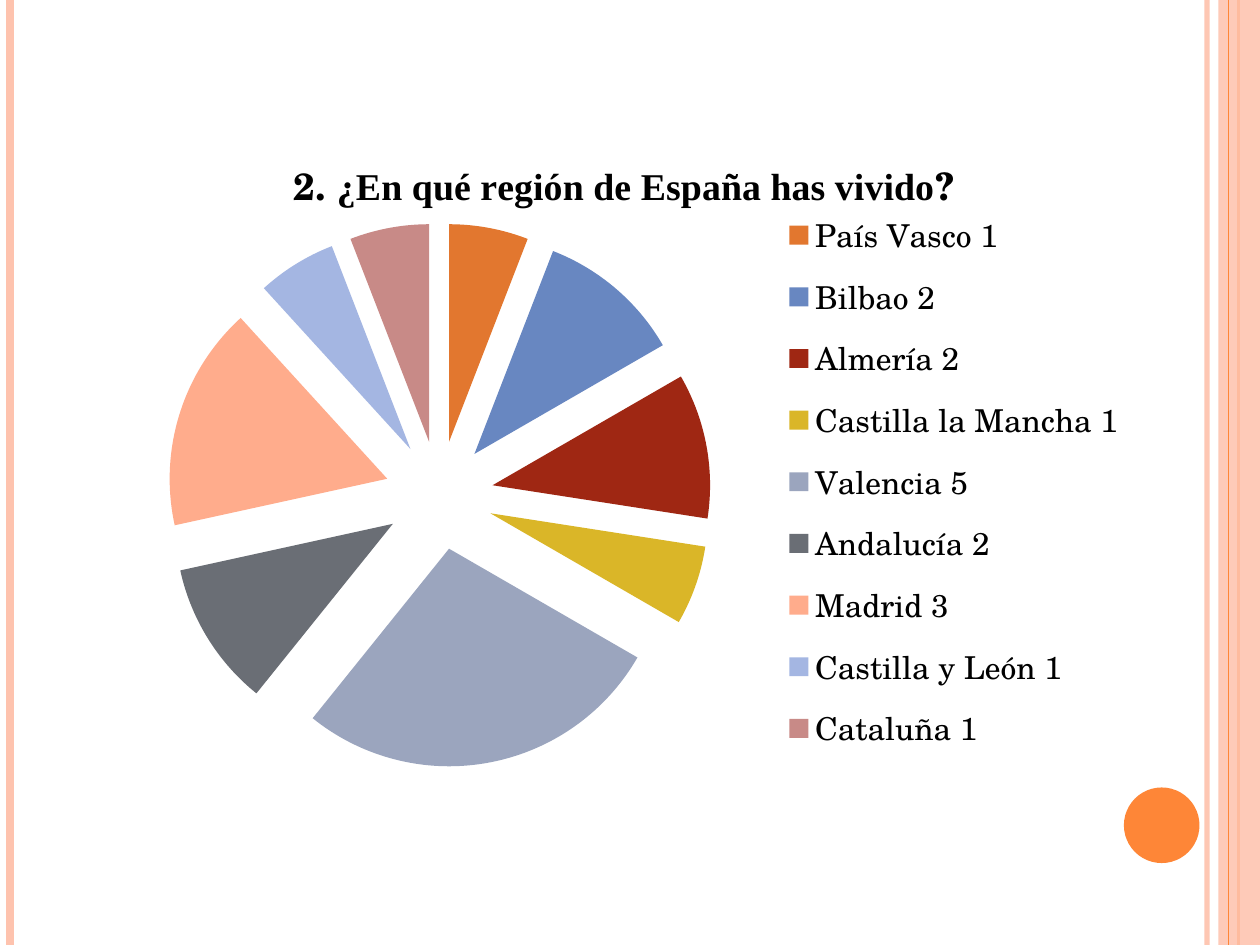
from lxml.etree import SubElement
from pptx import Presentation
from pptx.chart.data import CategoryChartData
from pptx.dml.color import RGBColor
from pptx.enum.chart import XL_CHART_TYPE as ChartKind, XL_LEGEND_POSITION as LegendSide
from pptx.enum.shapes import MSO_CONNECTOR as Connector, MSO_SHAPE as Shape
from pptx.oxml import parse_xml
from pptx.oxml.ns import nsdecls, qn
from pptx.util import Inches, Pt

WHITE = RGBColor(0xFF, 0xFF, 0xFF)
BLACK = RGBColor(0, 0, 0)
PEACH = RGBColor(0xFE, 0xC3, 0xAE)
ORANGE = RGBColor(0xFE, 0x86, 0x37)
SCHOLA, TIMES = "TeX Gyre Schola", "Times New Roman"
EXPLOSION = 25

# Region, share in percent, slice colour
REGIONS = [
    ("País Vasco 1", 6, RGBColor(0xE2, 0x77, 0x2F)),
    ("Bilbao 2", 11, RGBColor(0x68, 0x87, 0xC1)),
    ("Almería 2", 11, RGBColor(0x9F, 0x27, 0x13)),
    ("Castilla la Mancha 1", 6, RGBColor(0xDA, 0xB6, 0x28)),
    ("Valencia 5", 28, RGBColor(0x9B, 0xA5, 0xBE)),
    ("Andalucía 2", 11, RGBColor(0x6A, 0x6E, 0x75)),
    ("Madrid 3", 17, RGBColor(0xFF, 0xAC, 0x8C)),
    ("Castilla y León 1", 6, RGBColor(0xA4, 0xB6, 0xE2)),
    ("Cataluña 1", 6, RGBColor(0xC8, 0x8A, 0x87)),
]


def add_text(para, text, font=SCHOLA, size=18, bold=False, color=BLACK):
    """Add one formatted span to a paragraph."""
    span = para.add_run()
    span.text = text
    set_font(span.font, font, size, bold, color)


def set_font(target, font=SCHOLA, size=18, bold=False, color=BLACK):
    """Format a font object."""
    target.name, target.size, target.bold = font, Pt(size), bold
    target.color.rgb = color


def set_alpha(fill, percent):
    """Make a solid colour inside a fill or line element translucent."""
    color = next(fill.iter(qn("a:srgbClr")))
    SubElement(color, qn("a:alpha")).set("val", str(percent * 1000))


def chart_layout(inner=False, **shares):
    """Return a manual chart layout, given as shares of the chart."""
    target = '<c:layoutTarget val="inner"/>' if inner else ""
    modes = "".join(f'<c:{key}Mode val="edge"/>' for key in "xy")
    places = "".join(f'<c:{key} val="{value}"/>' for key, value in shares.items())
    return parse_xml(f'<c:layout {nsdecls("c")}><c:manualLayout>{target}{modes}'
                     f'{places}</c:manualLayout></c:layout>')


def place(element, layout, after=None):
    """Put a layout in a chart part, after the named child or first."""
    for old in element.findall(qn("c:layout")):
        element.remove(old)
    if after:
        element.find(qn(after)).addnext(layout)
    else:
        element.insert(0, layout)


class SlideBuilder:
    """Hold the deck and slide, and draw each kind of element."""

    def __init__(self, width, height):
        self.deck = Presentation()
        self.deck.slide_width, self.deck.slide_height = Inches(width), Inches(height)
        self.height = height
        self.page = self.deck.slides.add_slide(self.deck.slide_layouts[6])
        self.page.background.fill.solid()
        self.page.background.fill.fore_color.rgb = WHITE

    def stripe(self, x, color, weight, alpha=100):
        """Draw a full-height vertical line."""
        line = self.page.shapes.add_connector(
            Connector.STRAIGHT, Inches(x), 0, Inches(x), Inches(self.height))
        line.line.color.rgb, line.line.width = color, Pt(weight)
        properties = line._element.spPr
        SubElement(properties, qn("a:effectLst"))
        if alpha < 100:
            set_alpha(properties, alpha)

    def shape(self, kind, box, color, alpha=100):
        """Draw a filled preset shape without outline."""
        shape = self.page.shapes.add_shape(kind, *map(Inches, box))
        shape.shadow.inherit = False
        shape.fill.solid()
        shape.fill.fore_color.rgb = color
        shape.line.fill.background()
        if alpha < 100:
            set_alpha(shape._element.spPr, alpha)

    def pie(self, box, regions, title):
        """Draw an exploded pie with a title and a legend."""
        data = CategoryChartData()
        data.categories = [name for name, _, _ in regions]
        data.add_series("Series 1", [share for _, share, _ in regions])
        chart = self.page.shapes.add_chart(
            ChartKind.PIE, *map(Inches, box), data).chart
        set_font(chart.font)
        self.pie_title(chart, title)
        self.slices(chart.plots[0], [color for _, _, color in regions])
        chart.has_legend = True
        legend = chart.legend
        legend.position, legend.include_in_layout = LegendSide.RIGHT, False
        set_font(legend.font)
        place(legend._element, chart_layout(x=0.66, y=0.12, w=0.33, h=0.85),
              after="c:legendPos")
        place(chart._chartSpace.chart.plotArea,
              chart_layout(inner=True, x=0.06, y=0.16, w=0.53, h=0.81))

    def pie_title(self, chart, title):
        """Write the chart title from pairs of text and font."""
        chart.has_title = True
        para = chart.chart_title.text_frame.paragraphs[0]
        for text, font in title:
            add_text(para, text, font=font, size=21.6, bold=True)
        place(chart.chart_title._element, chart_layout(x=0.18, y=0.05), after="c:tx")

    def slices(self, plot, colors):
        """Colour the slices and pull them apart."""
        plot.vary_by_categories = True
        series = plot.series[0]
        for index, color in enumerate(colors):
            style = series.points[index].format
            style.fill.solid()
            style.fill.fore_color.rgb = color
            style.line.fill.background()
        for point in series._element.findall(qn("c:dPt")):
            point.find(qn("c:spPr")).addprevious(parse_xml(
                f'<c:explosion {nsdecls("c")} val="{EXPLOSION}"/>'))
        series._element.find(qn("c:dPt")).addprevious(parse_xml(
            f'<c:explosion {nsdecls("c")} val="{EXPLOSION}"/>'))


def main():
    """Build the slide and save it."""
    slide = SlideBuilder(10, 7.5)
    slide.stripe(9.58, PEACH, 3, alpha=93)
    slide.stripe(0.08, PEACH, 4.5)
    slide.stripe(9.83, ORANGE, 1.5)
    slide.shape(Shape.RECTANGLE, (9.67, 0, 0.33, 7.5), PEACH, alpha=87)
    slide.stripe(9.75, ORANGE, 0.75)
    slide.shape(Shape.OVAL, (8.92, 6.25, 0.6, 0.6), ORANGE)
    slide.pie((0.83, 0.92, 8.17, 5.33), REGIONS, [
        ("2. ", SCHOLA),
        ("¿En qué región de España has vivido", TIMES),
        ("?", SCHOLA),
    ])
    slide.deck.save("out.pptx")


main()
